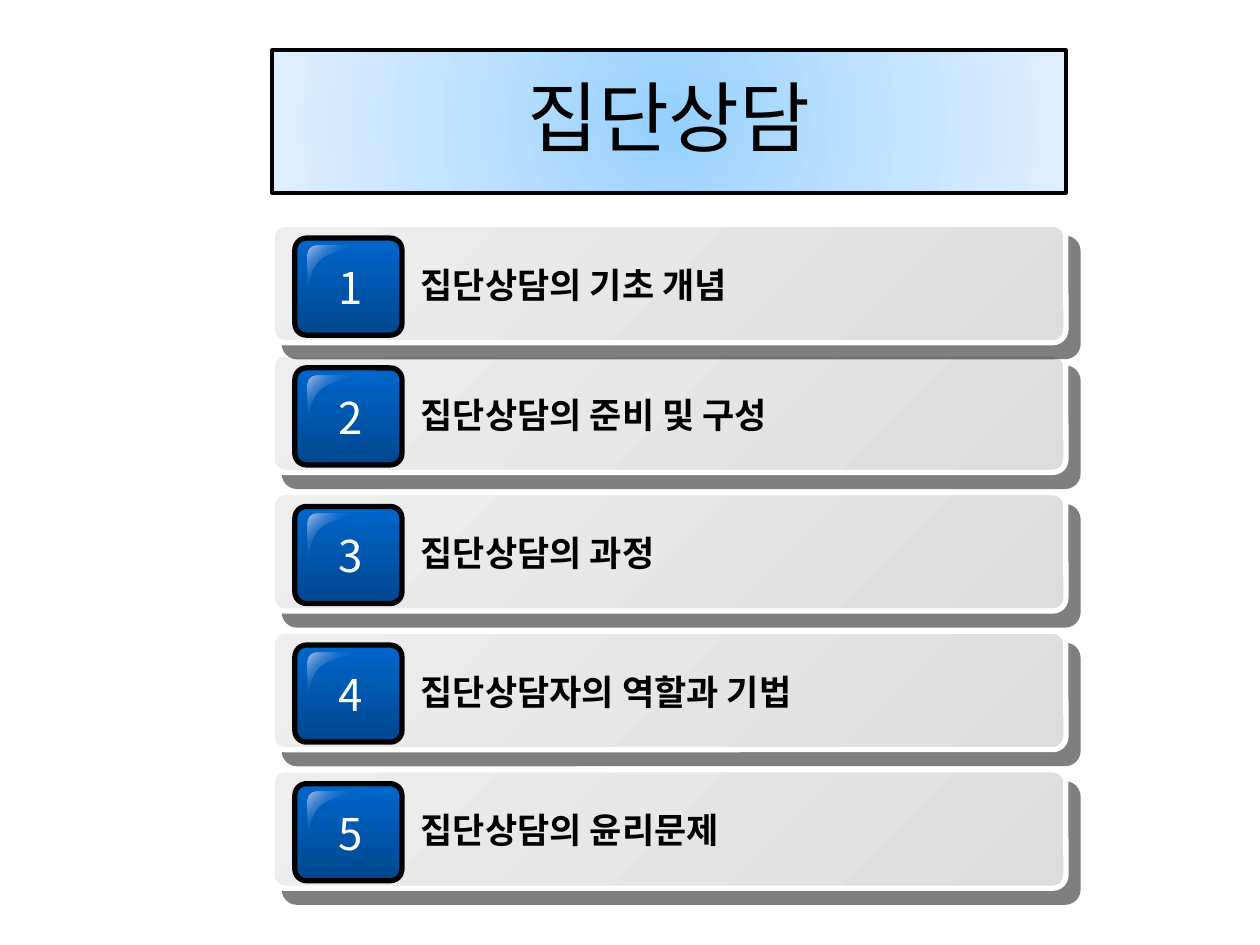
from lxml import etree
from pptx import Presentation
from pptx import util as u
from pptx.dml.color import RGBColor
from pptx.enum import shapes, text
from pptx.oxml.ns import qn

TITLE = "집단상담"
TOPICS = [
    ("1", "집단상담의 기초 개념", 1.78),
    ("2", "집단상담의 준비 및 구성", 2.81),
    ("3", "집단상담의 과정", 3.91),
    ("4", "집단상담자의 역할과 기법", 5.01),
    ("5", "집단상담의 윤리문제", 6.11),
]
STACKING = [2, 1, 5, 4, 3]
LEFT, WIDTH = 2.16, 6.3
TOPIC_FONT = "Noto Sans CJK KR"
COLORS = {"black": "000000", "white": "FFFFFF"}
GRADIENTS = {
    "title": [(0, "96D0FF", 100), (50, "BFE1FF", 100), (100, "E0EFFF", 100)],
    "card": [(0, "EEEEEE", 100), (100, "DDDDDD", 100)],
    "badge": [(0, "0066CC", 100), (100, "00478E", 100)],
    "glint": [(0, "B5C0E5", 100), (50, "0066CC", 0), (100, "B5C0E5", 100)],
}
GLINT_START = (0.08, 0)
GLINT_POINTS = [
    (0.03, 0), (0, 0.03), (0, 0.08),
    (0, 0.38),
    (0.02, 0.39), (0, 0.2), (0.11, 0.11),
    (0.22, 0.03), (0.42, 0.02), (0.42, 0),
]
GLINT_CURVE_STARTS = (0, 4, 7)


def child(parent, tag, **attributes):
    values = {name: str(value) for name, value in attributes.items()}
    return etree.SubElement(parent, qn(tag), values)


def add_color(parent, color, opacity):
    node = child(parent, "a:srgbClr", val=color)
    if opacity < 100:
        child(node, "a:alpha", val=opacity * 1000)


def paint(shape, gradient, angle=None):
    fill = child(shape.element.spPr, "a:gradFill", rotWithShape=1)
    stops = child(fill, "a:gsLst")
    for position, color, opacity in GRADIENTS[gradient]:
        add_color(child(stops, "a:gs", pos=position * 1000), color, opacity)
    if angle is None:
        center = child(fill, "a:path", path="circle")
        child(center, "a:fillToRect", l=50000, t=50000, r=50000, b=50000)
    else:
        child(fill, "a:lin", ang=angle * 60000, scaled=0)
    shape.shadow.inherit = False


def outline(shape, color, width):
    shape.line.color.rgb = RGBColor.from_string(COLORS[color])
    shape.line.width = u.Pt(width)


def add_panel(parent, kind, bounds, gradient, angle, line, width, corner=None):
    panel = parent.add_shape(kind, *map(u.Inches, bounds))
    if corner is not None:
        panel.adjustments[0] = corner
    paint(panel, gradient, angle)
    outline(panel, line, width)
    return panel


def cast_shadow(shape):
    effects = shape.element.spPr.find(qn("a:effectLst"))
    shadow = child(effects, "a:outerShdw", dist=u.Pt(10.6), dir=49 * 60000,
                   algn="ctr", rotWithShape=0)
    add_color(shadow, COLORS["black"], 50)


def add_span(para, words, size, font, color, bold=False):
    span = para.add_run()
    span.text = words
    span.font.size = u.Pt(size)
    span.font.name = font
    span.font.bold = bold
    span.font.color.rgb = RGBColor.from_string(COLORS[color])


def add_label(parent, bounds, words, size, color, align, wrap, bold):
    box = parent.add_textbox(*map(u.Inches, bounds))
    frame = box.text_frame
    frame.word_wrap = wrap
    frame.auto_size = text.MSO_AUTO_SIZE.SHAPE_TO_FIT_TEXT
    para = frame.paragraphs[0]
    para.alignment = align
    add_span(para, words, size, TOPIC_FONT, color, bold)


def bend(freeform, curve_starts):
    segments = list(freeform.element.spPr.iter(qn("a:lnTo")))
    for first in curve_starts:
        curve = etree.Element(qn("a:cubicBezTo"))
        segments[first].addprevious(curve)
        for segment in segments[first:first + 3]:
            curve.append(segment[0])
            segment.getparent().remove(segment)


def add_glint(parent, left, top):
    start, *points = [(u.Inches(left + x), u.Inches(top + y))
                      for x, y in [GLINT_START, *GLINT_POINTS]]
    builder = parent.build_freeform(*start)
    builder.add_line_segments(points + [start], close=True)
    glint = builder.convert_to_shape()
    bend(glint, GLINT_CURVE_STARTS)
    paint(glint, "glint", 45)
    glint.line.fill.background()


def add_topic(page, number, topic, top):
    group = page.shapes.add_group_shape().shapes
    rounded = shapes.MSO_SHAPE.ROUNDED_RECTANGLE
    card = add_panel(group, rounded, (LEFT, top, WIDTH, 0.94),
                     "card", 45, "white", 3, 0.109)
    cast_shadow(card)
    add_panel(group, rounded, (LEFT + 0.18, top + 0.11, 0.85, 0.77),
              "badge", 90, "black", 3, 0.119)
    add_glint(group, LEFT + 0.28, top + 0.17)
    add_label(group, (LEFT + 0.41, top + 0.24, 0.42, 0.52), number, 25,
              "white", text.PP_ALIGN.CENTER, False, False)
    add_label(group, (LEFT + 1.08, top + 0.26, 4.51, 0.43), topic, 20,
              "black", text.PP_ALIGN.LEFT, True, True)


def add_title(page):
    title = add_panel(page.shapes, shapes.MSO_SHAPE.RECTANGLE,
                      (LEFT, 0.4, WIDTH, 1.13), "title", None, "black", 2.25)
    title.text_frame.word_wrap = True
    title.text_frame.vertical_anchor = text.MSO_ANCHOR.MIDDLE
    para = title.text_frame.paragraphs[0]
    para.alignment = text.PP_ALIGN.CENTER
    para.line_spacing = 0.9
    add_span(para, TITLE, 44, "Calibri", "black")


def main():
    deck = Presentation()
    deck.slide_width, deck.slide_height = u.Inches(10), u.Inches(7.5)
    page = deck.slides.add_slide(deck.slide_layouts[6])
    add_title(page)
    for number in STACKING:
        add_topic(page, *TOPICS[number - 1])
    deck.save("out.pptx")


if __name__ == "__main__":
    main()
